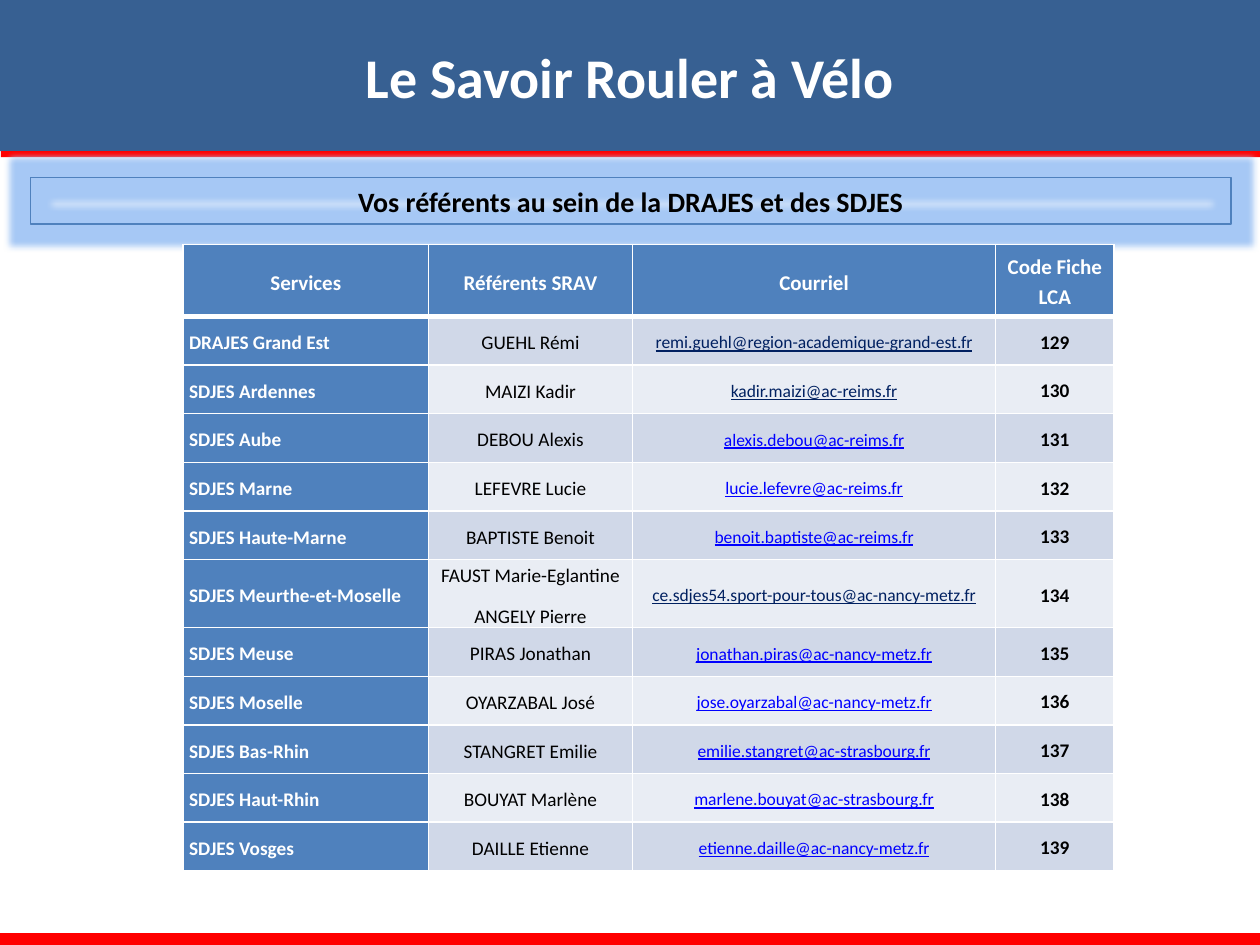
from lxml import etree
from pptx import Presentation
from pptx.dml.color import RGBColor
from pptx.enum.shapes import MSO_SHAPE
from pptx.enum.text import MSO_ANCHOR, MSO_AUTO_SIZE, PP_ALIGN
from pptx.oxml import parse_xml
from pptx.oxml.ns import nsdecls, qn
from pptx.util import Cm, Pt

RECTANGLE = MSO_SHAPE.RECTANGLE
LEFT, CENTER = PP_ALIGN.LEFT, PP_ALIGN.CENTER
MIDDLE = MSO_ANCHOR.MIDDLE
GROW = MSO_AUTO_SIZE.SHAPE_TO_FIT_TEXT

WIDTH, HEIGHT = 25.4, 19.05
FONT = "Calibri"
NAVY, BLUE, RED, WHITE, BLACK = "376092", "4F81BD", "FF0000", "FFFFFF", "000000"
BAND_DARK, BAND_LIGHT = "D0D8E8", "E9EDF4"
LINK, LINK_DARK = "0000FF", "002060"
GLOW = "A6C8F5"

COLUMN_WIDTHS = [4.95, 4.11, 7.32, 2.39]
HEADER_HEIGHT, ROW_HEIGHT, TALL_ROW_HEIGHT = 1.45, 0.98, 1.3
HEADERS = ["Services", "Référents SRAV", "Courriel", "Code Fiche LCA"]
CONTACTS = [
    ("DRAJES Grand Est", ["GUEHL Rémi"], "remi.guehl@region-academique-grand-est.fr", LINK_DARK),
    ("SDJES Ardennes", ["MAIZI Kadir"], "kadir.maizi@ac-reims.fr", LINK_DARK),
    ("SDJES Aube", ["DEBOU Alexis"], "alexis.debou@ac-reims.fr", LINK),
    ("SDJES Marne", ["LEFEVRE Lucie"], "lucie.lefevre@ac-reims.fr", LINK),
    ("SDJES Haute-Marne", ["BAPTISTE Benoit"], "benoit.baptiste@ac-reims.fr", LINK),
    ("SDJES Meurthe-et-Moselle", ["FAUST Marie-Eglantine", "ANGELY Pierre"],
     "ce.sdjes54.sport-pour-tous@ac-nancy-metz.fr", LINK_DARK),
    ("SDJES Meuse", ["PIRAS Jonathan"], "jonathan.piras@ac-nancy-metz.fr", LINK),
    ("SDJES Moselle", ["OYARZABAL José"], "jose.oyarzabal@ac-nancy-metz.fr", LINK),
    ("SDJES Bas-Rhin", ["STANGRET Emilie"], "emilie.stangret@ac-strasbourg.fr", LINK),
    ("SDJES Haut-Rhin", ["BOUYAT Marlène"], "marlene.bouyat@ac-strasbourg.fr", LINK),
    ("SDJES Vosges", ["DAILLE Etienne"], "etienne.daille@ac-nancy-metz.fr", LINK),
]
FIRST_CODE = 129


def color(value):
    return RGBColor.from_string(value)


def write(paragraph, text, size=11, fill=BLACK, bold=False, underline=False, align=CENTER):
    paragraph.alignment = align
    run = paragraph.add_run()
    run.text = text
    font = run.font
    font.name, font.size, font.bold = FONT, Pt(size), bold
    font.underline = underline or None
    font.color.rgb = color(fill)


def add_rectangle(slide, left, top, width, height, fill=None):
    shape = slide.shapes.add_shape(RECTANGLE, Cm(left), Cm(top), Cm(width), Cm(height))
    shape.shadow.inherit = False
    shape.line.fill.background()
    if fill:
        shape.fill.solid()
        shape.fill.fore_color.rgb = color(fill)
    else:
        shape.fill.background()
    return shape


def add_title_band(slide, left, top, width, height):
    band = add_rectangle(slide, left, top, width, height, NAVY)
    band.text_frame.word_wrap = True
    band.text_frame.vertical_anchor = MIDDLE
    write(band.text_frame.paragraphs[0], "Le Savoir Rouler à Vélo", size=32, fill=WHITE, bold=True)


def add_subtitle(slide, left, top, width, height):
    box = add_rectangle(slide, left, top, width, height)
    box.line.color.rgb = color(BLUE)
    box.line.width = Pt(0)
    frame = box.text_frame
    frame.word_wrap = True
    frame.auto_size = GROW
    write(frame.paragraphs[0], "Vos référents au sein de la DRAJES et des SDJES", size=16, bold=True)
    # Soft halo around the outline
    effects = box._element.spPr.find(qn("a:effectLst"))
    glow = etree.SubElement(effects, qn("a:glow"), rad=str(Cm(0.28)))
    etree.SubElement(glow, qn("a:srgbClr"), val=GLOW)


def set_borders(cell, top=0.96, bottom=0.96):
    properties = cell._tc.get_or_add_tcPr()
    for side, width in (("L", 0.96), ("R", 0.96), ("T", top), ("B", bottom)):
        properties.append(parse_xml(
            f'<a:ln{side} {nsdecls("a")} w="{Pt(width)}"><a:solidFill>'
            f'<a:srgbClr val="{WHITE}"/></a:solidFill></a:ln{side}>'))


def fill_cell(cell, lines, background, borders, flush=False, **text_format):
    set_borders(cell, **borders)
    cell.fill.solid()
    cell.fill.fore_color.rgb = color(background)
    cell.vertical_anchor = MIDDLE
    cell.margin_left = cell.margin_right = Cm(0 if flush else 0.12)
    cell.margin_top, cell.margin_bottom = Cm(0 if flush else 0.02), Cm(0)
    frame = cell.text_frame
    for index, line in enumerate(lines):
        paragraph = frame.add_paragraph() if index else frame.paragraphs[0]
        paragraph.line_spacing = 1.15
        paragraph.space_after = Pt(8)
        if len(lines) > 1:
            # Hanging indent for several names
            properties = paragraph._p.get_or_add_pPr()
            properties.set("marL", str(Cm(0.25)))
            properties.set("indent", str(-Cm(0.25)))
        write(paragraph, line, **text_format)


def add_contact_table(slide, left, top):
    heights = [HEADER_HEIGHT] + [
        TALL_ROW_HEIGHT if len(names) > 1 else ROW_HEIGHT for _, names, _, _ in CONTACTS]
    table = slide.shapes.add_table(
        len(heights), len(COLUMN_WIDTHS), Cm(left), Cm(top),
        Cm(sum(COLUMN_WIDTHS)), Cm(sum(heights))).table
    table.first_row = table.horz_banding = False
    for column, width in zip(table.columns, COLUMN_WIDTHS):
        column.width = Cm(width)
    for row, height in zip(table.rows, heights):
        row.height = Cm(height)

    # Header row
    last_column = len(HEADERS) - 1
    for index, header in enumerate(HEADERS):
        fill_cell(table.cell(0, index), [header], BLUE, {"bottom": 3},
                  flush=index == last_column, size=12, fill=WHITE, bold=True)

    # One row per service, with alternating bands
    for index, (service, names, email, link_color) in enumerate(CONTACTS):
        cells = table.rows[index + 1].cells
        band = BAND_LIGHT if index % 2 else BAND_DARK
        borders = {"top": 0.96 if index else 3}
        fill_cell(cells[0], [service], BLUE, borders, fill=WHITE, bold=True, align=LEFT)
        fill_cell(cells[1], names, band, borders)
        fill_cell(cells[2], [email], band, borders, size=10, fill=link_color, underline=True)
        fill_cell(cells[3], [str(FIRST_CODE + index)], band, borders, flush=True, bold=True)


def main():
    presentation = Presentation()
    presentation.slide_width, presentation.slide_height = Cm(WIDTH), Cm(HEIGHT)
    slide = presentation.slides.add_slide(presentation.slide_layouts[6])

    add_title_band(slide, 0, 0, WIDTH, 3.05)
    # Red rules under the title and at the foot
    add_rectangle(slide, 0, 18.81, WIDTH, 0.24, RED)
    add_rectangle(slide, 0.02, 3.05, WIDTH, 0.12, RED)
    add_subtitle(slide, 0.61, 3.58, 24.21, 0.94)
    add_contact_table(slide, 3.69, 4.93)

    presentation.save("out.pptx")


if __name__ == "__main__":
    main()
